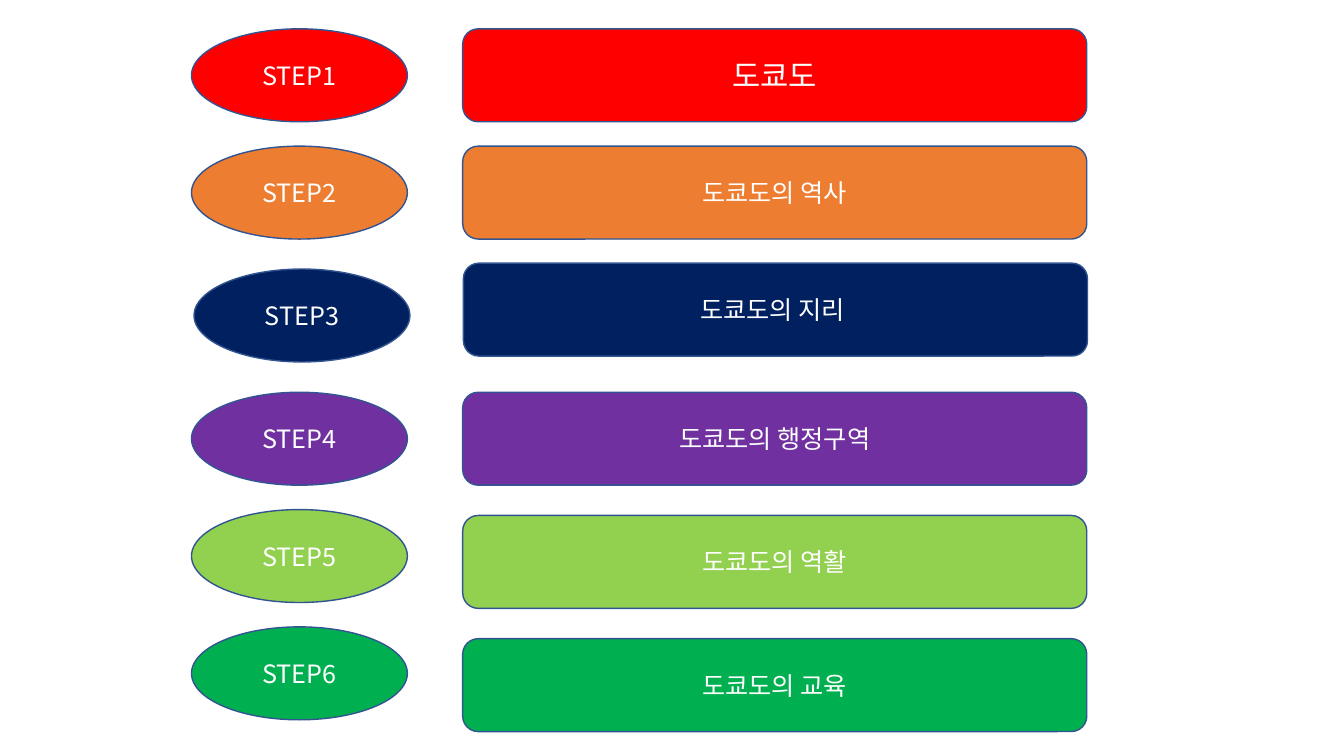
from dataclasses import dataclass

from lxml import etree
from pptx import Presentation
from pptx.dml.color import RGBColor
from pptx.enum import shapes, text
from pptx.oxml import ns
from pptx.util import Pt


@dataclass(frozen=True)
class Theme:
    face: str = "Noto Sans CJK KR"
    ink: str = "FFFFFF"
    outline: str = "325491"
    outline_width: float = 1
    body: float = 18
    lead: float = 22


class StepList:
    STEP_LEFT, STEP_WIDTH = 136.8, 154.2
    TOPIC_LEFT, TOPIC_WIDTH = 330.5, 445.8
    HEIGHT = 66.4

    def __init__(self, slide, theme):
        self.slide = slide
        self.theme = theme

    def label(self, kind, left, top, width, fill, words, size):
        """Draw an outlined shape with centred words."""
        theme = self.theme
        label = self.slide.shapes.add_shape(
            kind, Pt(left), Pt(top), Pt(width), Pt(self.HEIGHT))
        label.shadow.inherit = False
        label.fill.solid()
        label.fill.fore_color.rgb = RGBColor.from_string(fill)
        label.line.color.rgb = RGBColor.from_string(theme.outline)
        label.line.width = Pt(theme.outline_width)

        frame = label.text_frame
        frame.word_wrap = True
        frame.vertical_anchor = text.MSO_ANCHOR.MIDDLE
        paragraph = frame.paragraphs[0]
        paragraph.alignment = text.PP_ALIGN.CENTER
        run = paragraph.add_run()
        run.text = words
        run.font.color.rgb = RGBColor.from_string(theme.ink)
        for name, value in {"name": theme.face, "size": Pt(size)}.items():
            setattr(run.font, name, value)
        # Hangul takes its face from the East Asian font element.
        east_asian = etree.SubElement(run.font._element, ns.qn("a:ea"))
        east_asian.set("typeface", theme.face)

    def step(self, number, top, fill, nudge):
        self.label(shapes.MSO_SHAPE.OVAL, self.STEP_LEFT + nudge, top,
                   self.STEP_WIDTH, fill, f"STEP{number}", self.theme.body)

    def topic(self, words, top, fill, nudge, size):
        self.label(shapes.MSO_SHAPE.ROUNDED_RECTANGLE, self.TOPIC_LEFT + nudge,
                   top, self.TOPIC_WIDTH, fill, words, size)


def main():
    deck = Presentation()
    deck.slide_width, deck.slide_height = Pt(960), Pt(540)
    blank = deck.slide_layouts[6]
    theme = Theme()
    steps = StepList(deck.slides.add_slide(blank), theme)

    # topic, fill, step top, topic top, step nudge, topic nudge, topic size
    agenda = [
        ("도쿄도", "FF0000", 20.6, 20.6, 0, 0, theme.lead),
        ("도쿄도의 역사", "ED7D31", 104.4, 104.4, 0, 0, theme.body),
        ("도쿄도의 지리 ", "002060", 192.2, 188, 1.8, 0.5, theme.body),
        ("도쿄도의 행정구역", "7030A0", 280.2, 280.2, 0, 0, theme.body),
        ("도쿄도의 역활", "92D050", 364, 368.2, 0, 0, theme.body),
        ("도쿄도의 교육", "00B050", 447.8, 456.2, 0, 0, theme.body),
    ]
    for number, row in enumerate(agenda, start=1):
        words, fill, step_top, topic_top, step_nudge, topic_nudge, size = row
        steps.step(number, step_top, fill, step_nudge)
        steps.topic(words, topic_top, fill, topic_nudge, size)

    deck.save("out.pptx")


if __name__ == "__main__":
    main()
